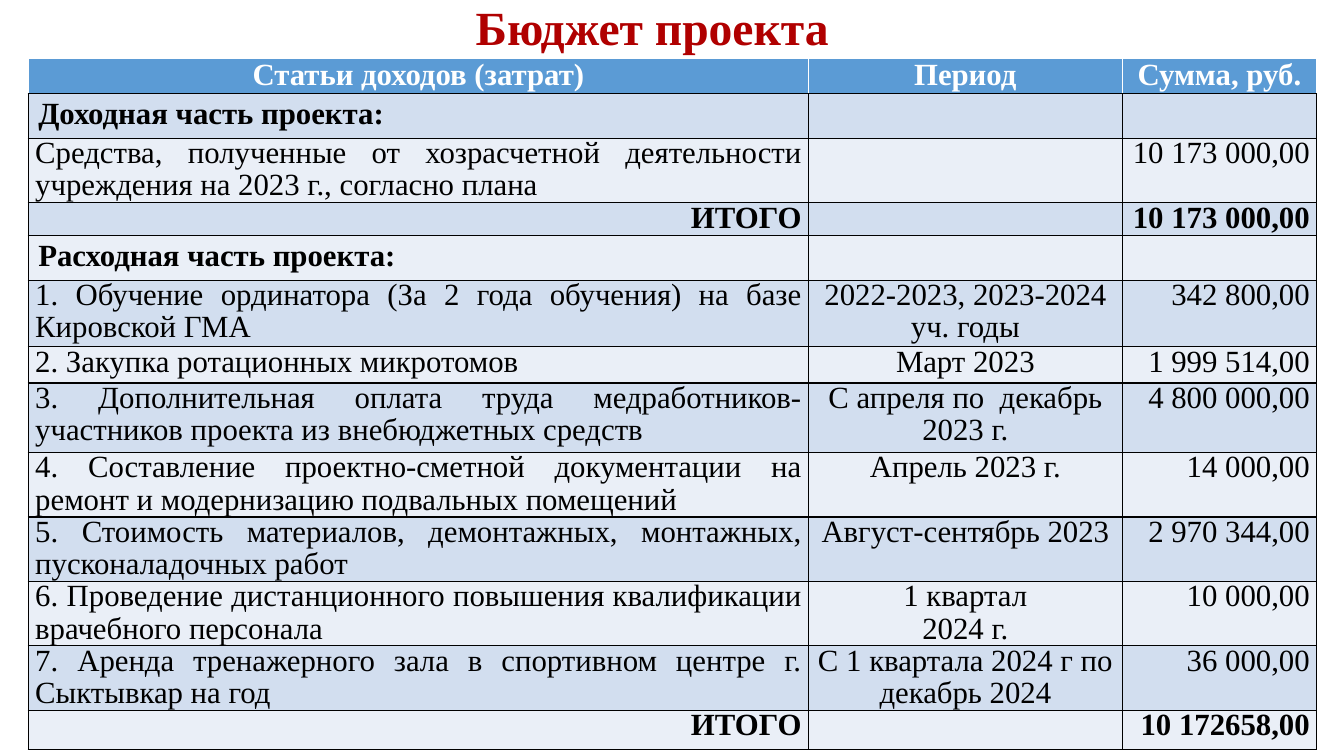
from dataclasses import dataclass

import pptx
import pptx.dml.color
import pptx.enum.text
import pptx.oxml
import pptx.oxml.ns
import pptx.util

ALIGN = pptx.enum.text.PP_ALIGN
ANCHOR = pptx.enum.text.MSO_ANCHOR


@dataclass(frozen=True)
class Theme:
    font: str = "Times New Roman"
    title: str = "B00000"
    header: str = "5B9BD5"
    light: str = "FFFFFF"
    dark: str = "000000"
    bands: tuple[str, str] = ("D2DEEF", "EAEFF7")
    title_size: int = 34
    table_size: int = 22
    header_leading: int = 24
    body_leading: int = 23
    border_width: int = 1


@dataclass(frozen=True)
class BudgetRow:
    height: float  # percent of the slide height
    article: str
    period: str = ""
    amount: str = ""
    kind: str = "item"


THEME = Theme()
WIDTH, HEIGHT = pptx.util.Inches(13.33), pptx.util.Inches(7.5)

# Positions and sizes in percent of the slide
TITLE_BOX = (5.4, -1.2, 86.27, 10.4)
TABLE_LEFT, TABLE_TOP = 2.1, 7.73
COLUMNS = (58.06, 23.33, 14.48)

ROWS = (
    BudgetRow(4.67, "Статьи доходов (затрат)", "Период", "Сумма, руб.", "header"),
    BudgetRow(5.87, "Доходная часть проекта:", kind="section"),
    BudgetRow(8.53, "Средства, полученные от хозрасчетной деятельности учреждения на 2023 г., "
              "согласно плана", amount="10 173 000,00"),
    BudgetRow(4.4, "ИТОГО", amount="10 173 000,00", kind="total"),
    BudgetRow(5.87, "Расходная часть проекта:", kind="section"),
    BudgetRow(8.8, "1. Обучение ординатора (За 2 года обучения) на базе Кировской ГМА",
              "2022-2023, 2023-2024 уч. годы", "342 800,00"),
    BudgetRow(4.8, "2. Закупка ротационных микротомов", "Март 2023", "1 999 514,00"),
    BudgetRow(9.2, "3. Дополнительная оплата труда медработников-участников проекта "
              "из внебюджетных средств", "С апреля по  декабрь 2023 г.", "4 800 000,00"),
    BudgetRow(8.53, "4. Составление проектно-сметной документации на ремонт и модернизацию "
              "подвальных помещений", "Апрель 2023 г.", "14 000,00"),
    BudgetRow(8.53, "5. Стоимость материалов, демонтажных, монтажных, пусконаладочных работ",
              "Август-сентябрь 2023", "2 970 344,00"),
    BudgetRow(8.53, "6. Проведение дистанционного повышения квалификации врачебного персонала",
              "1 квартал\n2024 г.", "10 000,00"),
    BudgetRow(8.53, "7. Аренда тренажерного зала в спортивном центре г. Сыктывкар на год",
              "С 1 квартала 2024 г по декабрь 2024", "36 000,00"),
    BudgetRow(5.2, "ИТОГО", amount="10 172658,00", kind="total"),
)

# Alignment of the three columns for each kind of row
ALIGNMENTS = {
    "header": (ALIGN.CENTER, ALIGN.CENTER, ALIGN.CENTER),
    "section": (ALIGN.LEFT, ALIGN.CENTER, ALIGN.RIGHT),
    "item": (ALIGN.JUSTIFY, ALIGN.CENTER, ALIGN.RIGHT),
    "total": (ALIGN.RIGHT, ALIGN.CENTER, ALIGN.RIGHT),
}


def across(percent: float) -> int:
    return round(WIDTH * percent / 100)


def down(percent: float) -> int:
    return round(HEIGHT * percent / 100)


def rgb(color: str) -> pptx.dml.color.RGBColor:
    return pptx.dml.color.RGBColor.from_string(color)


def write_text(text_frame, text: str, *, size: int, color: str, bold: bool,
               alignment, spacing) -> None:
    """Write one paragraph for each line of text."""
    for index, line in enumerate(text.split("\n")):
        paragraph = text_frame.add_paragraph() if index else text_frame.paragraphs[0]
        paragraph.alignment = alignment
        paragraph.line_spacing = spacing
        run = paragraph.add_run()
        run.text = line
        run.font.name = THEME.font
        run.font.size = pptx.util.Pt(size)
        run.font.bold = bold
        run.font.color.rgb = rgb(color)


def add_title(slide, text: str) -> None:
    left, top, width, height = TITLE_BOX
    shape = slide.shapes.add_textbox(across(left), down(top), across(width), down(height))
    shape.text_frame.word_wrap = True
    shape.text_frame.vertical_anchor = ANCHOR.MIDDLE
    write_text(shape.text_frame, text, size=THEME.title_size, color=THEME.title, bold=True,
               alignment=ALIGN.CENTER, spacing=0.9)


def set_borders(cell, side_color: str, top_color: str) -> None:
    properties = cell._tc.get_or_add_tcPr()
    colors = {"L": side_color, "R": side_color, "T": top_color, "B": THEME.dark}
    for side, color in colors.items():
        properties.append(pptx.oxml.parse_xml(
            f'<a:ln{side} {pptx.oxml.ns.nsdecls("a")} w="{pptx.util.Pt(THEME.border_width)}">'
            f'<a:solidFill><a:srgbClr val="{color}"/></a:solidFill></a:ln{side}>'))


def fill_cell(cell, text: str, row: BudgetRow, row_index: int, alignment) -> None:
    is_header = row.kind == "header"
    border = THEME.light if is_header else THEME.dark
    set_borders(cell, border, border)
    cell.fill.solid()
    cell.fill.fore_color.rgb = rgb(THEME.header if is_header else THEME.bands[(row_index - 1) % 2])

    # Section headings sit a little further from the cell edges
    is_section = row.kind == "section" and bool(text)
    cell.margin_left = cell.margin_right = pptx.util.Inches(0.1 if is_section else 0.07)
    cell.margin_top = cell.margin_bottom = pptx.util.Inches(0.05 if is_section else 0)
    if text:
        leading = THEME.header_leading if is_header else THEME.body_leading
        write_text(cell.text_frame, text, size=THEME.table_size,
                   color=THEME.light if is_header else THEME.dark, bold=row.kind != "item",
                   alignment=alignment, spacing=pptx.util.Pt(leading))


def add_budget_table(slide) -> None:
    frame = slide.shapes.add_table(
        len(ROWS), len(COLUMNS), across(TABLE_LEFT), down(TABLE_TOP),
        across(sum(COLUMNS)), down(sum(row.height for row in ROWS)))
    table = frame.table
    table.first_row = table.horz_banding = False
    for column, width in zip(table.columns, COLUMNS):
        column.width = across(width)
    for row_index, row in enumerate(ROWS):
        table.rows[row_index].height = down(row.height)
        texts = (row.article, row.period, row.amount)
        for column_index, (text, alignment) in enumerate(zip(texts, ALIGNMENTS[row.kind])):
            fill_cell(table.cell(row_index, column_index), text, row, row_index, alignment)


def main() -> None:
    presentation = pptx.Presentation()
    presentation.slide_width, presentation.slide_height = WIDTH, HEIGHT
    slide = presentation.slides.add_slide(presentation.slide_layouts[6])
    add_title(slide, "Бюджет проекта")
    add_budget_table(slide)
    presentation.save("out.pptx")


if __name__ == "__main__":
    main()
